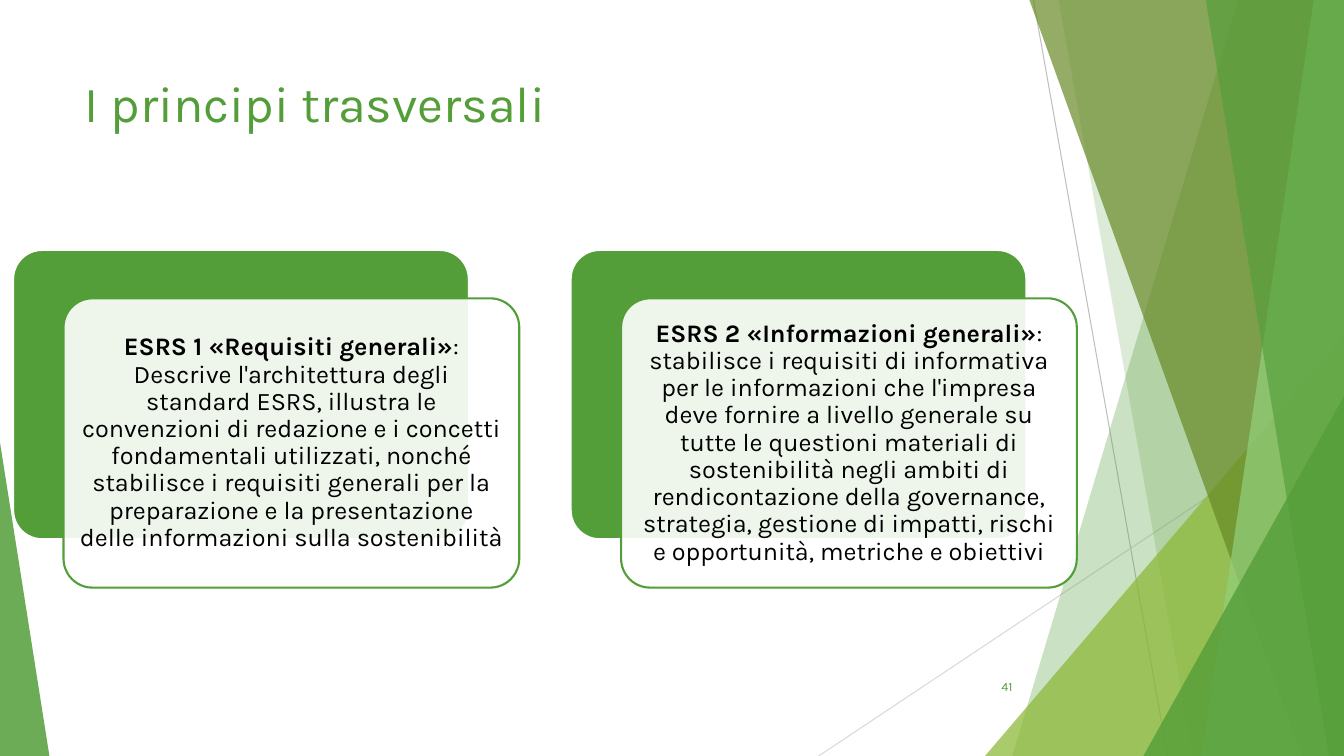
from lxml.etree import SubElement
from pptx import Presentation
from pptx.dml.color import RGBColor
from pptx.enum.shapes import MSO_CONNECTOR as Connector, MSO_SHAPE as Shape
from pptx.enum.text import MSO_ANCHOR as Anchor, PP_ALIGN as Align
from pptx.oxml.ns import qn
from pptx.util import Inches, Pt

WIDTH, HEIGHT = 13.33, 7.5
GREEN, LIME, OLIVE, MINT = "549E39", "8AB833", "678A26", "93D07D"
WHITE, BLACK = "FFFFFF", "000000"

PRINCIPLES = [
    ("ESRS 1 «Requisiti generali»",
     ": Descrive l'architettura degli standard ESRS, illustra le convenzioni di "
     "redazione e i concetti fondamentali utilizzati, nonché stabilisce i requisiti "
     "generali per la preparazione e la presentazione delle informazioni sulla "
     "sostenibilità"),
    ("ESRS 2 «Informazioni generali»",
     ": stabilisce i requisiti di informativa per le informazioni che l'impresa deve "
     "fornire a livello generale su tutte le questioni materiali di sostenibilità "
     "negli ambiti di rendicontazione della governance, strategia, gestione di "
     "impatti, rischi e opportunità, metriche e obiettivi"),
]


def color(value):
    return RGBColor.from_string(value)


def paint(shape, fill, opacity=100, line=None):
    shape.shadow.inherit = False
    shape.fill.solid()
    shape.fill.fore_color.rgb = color(fill)
    if opacity < 100:
        tint = shape.fill._xPr.find(qn("a:solidFill"))[0]
        SubElement(tint, qn("a:alpha"), val=str(opacity * 1000))
    if line:
        shape.line.color.rgb = color(line)
        shape.line.width = Pt(1.5)
    else:
        shape.line.fill.background()


def write(frame, runs, size, ink, align=Align.LEFT, anchor=Anchor.TOP,
          spacing=1.0, after=0, inset=(0.1, 0.05)):
    frame.word_wrap = True
    frame.vertical_anchor = anchor
    frame.margin_left = frame.margin_right = Inches(inset[0])
    frame.margin_top = frame.margin_bottom = Inches(inset[1])
    paragraph = frame.paragraphs[0]
    paragraph.alignment = align
    paragraph.line_spacing = spacing
    paragraph.space_after = Pt(after)
    for words, bold in runs:
        run = paragraph.add_run()
        run.text = words
        run.font.name = "Karla"
        run.font.size = Pt(size)
        run.font.bold = bold
        run.font.color.rgb = color(ink)


def add_label(slide, box, words, size, **style):
    label = slide.shapes.add_textbox(*map(Inches, box))
    write(label.text_frame, [(words, False)], size, GREEN, **style)


def add_ray(slide, start, end, ink):
    ray = slide.shapes.add_connector(Connector.STRAIGHT, *map(Inches, start + end))
    ray.line.color.rgb = color(ink)
    ray.line.width = Pt(0.75)
    SubElement(ray._element.spPr, qn("a:effectLst"))


def add_band(slide, box, top_x, bottom_x, fill, opacity):
    left, top, width, height = box
    right, bottom = left + width, top + height
    corners = [(left + top_x, top), (right, top), (right, bottom),
               (left + bottom_x, bottom)]
    points = [(Inches(x), Inches(y)) for x, y in corners]
    builder = slide.shapes.build_freeform(*points[0], scale=1.0)
    builder.add_line_segments(points[1:], close=True)
    paint(builder.convert_to_shape(), fill, opacity)


def add_wedge(slide, box, peak, fill, opacity):
    wedge = slide.shapes.add_shape(Shape.ISOSCELES_TRIANGLE, *map(Inches, box))
    wedge.adjustments[0] = peak
    paint(wedge, fill, opacity)


def add_facets(slide, box):
    left, top, width, height = box
    right, bottom = left + width, top + height

    def corner_wedge(wide, tall, fill, opacity):
        add_wedge(slide, (right - wide, bottom - tall, wide, tall), 1, fill, opacity)

    add_ray(slide, (left + 2.13, top), (left + 3.46, bottom), "BFBFBF")
    add_ray(slide, (right, top + 4.03), (left, bottom), "D9D9D9")
    add_band(slide, box, 4.16, 1.92, GREEN, 30)
    add_band(slide, box, 2.38, 3.71, GREEN, 20)
    corner_wedge(3.56, 4.17, LIME, 72)
    add_band(slide, box, 2.09, 4.79, OLIVE, 70)
    add_band(slide, box, 4.91, 3.8, MINT, 70)
    add_band(slide, box, 3.84, 5.06, GREEN, 65)
    corner_wedge(1.99, 3.57, GREEN, 80)


def add_principle(slide, box, name, description):
    left, top, width, height = box
    shift_x, shift_y = 0.5, 0.48
    size = (width - shift_x, height - shift_y)
    back, front = [
        slide.shapes.add_shape(Shape.ROUNDED_RECTANGLE, *map(Inches, place + size))
        for place in [(left, top), (left + shift_x, top + shift_y)]]
    for panel in (back, front):
        panel.adjustments[0] = 0.1
    paint(back, GREEN, line=WHITE)
    paint(front, WHITE, 90, line=GREEN)
    write(front.text_frame, [(name, True), (description, False)], 18, BLACK,
          align=Align.CENTER, anchor=Anchor.MIDDLE, spacing=0.9, after=6.3,
          inset=(0.07, 0.07))


def add_principles(slide, box):
    left, top, width, height = box
    gap = 0.51
    card_width = (width - gap) / len(PRINCIPLES)
    for column, principle in enumerate(PRINCIPLES):
        card_left = left + column * (card_width + gap)
        add_principle(slide, (card_left, top, card_width, height), *principle)


def main():
    deck = Presentation()
    deck.slide_width, deck.slide_height = Inches(WIDTH), Inches(HEIGHT)
    slide = deck.slides.add_slide(deck.slide_layouts[6])
    add_facets(slide, (8.12, 0, WIDTH - 8.12, HEIGHT))
    add_wedge(slide, (0, HEIGHT - 3.11, 0.49, 3.11), 0, GREEN, 85)
    add_label(slide, (0.74, 0.67, 9.4, 1.44), "I principi trasversali", 36)
    add_label(slide, (9.39, 6.61, 0.75, 0.4), "41", 9,
              align=Align.RIGHT, anchor=Anchor.MIDDLE, after=6)
    add_principles(slide, (0.13, 2.48, 10.55, 3.35))
    deck.save("out.pptx")


if __name__ == "__main__":
    main()
